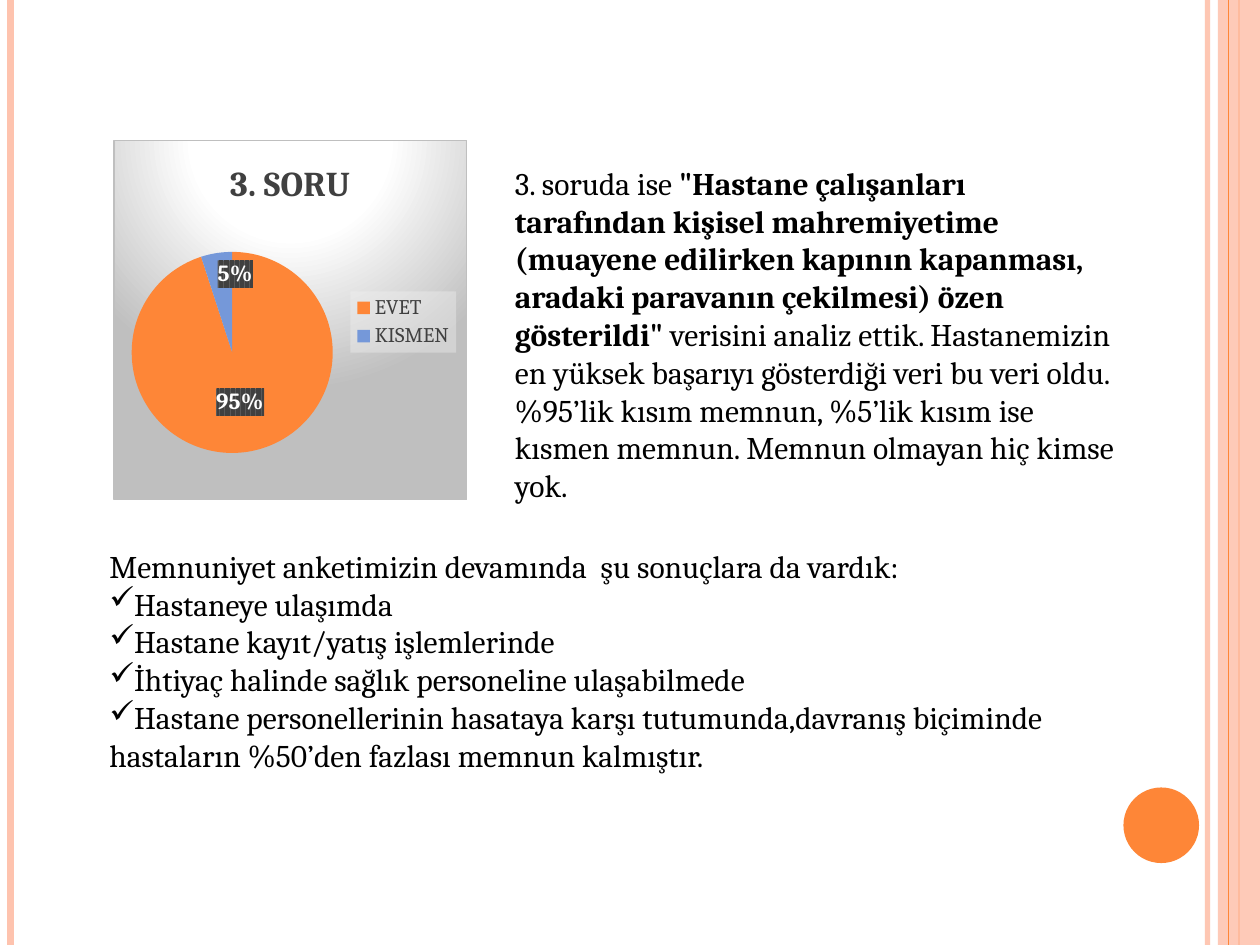
from dataclasses import dataclass

from lxml import etree
from pptx import Presentation
from pptx.chart.data import CategoryChartData
from pptx.dml.color import RGBColor
from pptx.enum.chart import XL_CHART_TYPE, XL_LABEL_POSITION, XL_LEGEND_POSITION
from pptx.enum.shapes import MSO_CONNECTOR, MSO_SHAPE
from pptx.oxml import parse_xml
from pptx.oxml.ns import nsdecls, qn
from pptx.util import Pt

PIE = XL_CHART_TYPE.PIE
RIGHT = XL_LEGEND_POSITION.RIGHT
CENTER = XL_LABEL_POSITION.CENTER
INSIDE_END = XL_LABEL_POSITION.INSIDE_END
STRAIGHT = MSO_CONNECTOR.STRAIGHT
RECTANGLE = MSO_SHAPE.RECTANGLE
OVAL = MSO_SHAPE.OVAL

WIDTH, HEIGHT = 720, 540
FONT = "Cambria"
ORANGE, PEACH, BLUE = "FE8637", "FEC3AE", "7598D9"
BLACK, WHITE, DARK, GRAY = "000000", "FFFFFF", "404040", "BFBFBF"


@dataclass
class Stripe:
    x: float
    weight: float
    color: str
    opacity: int = 100


@dataclass
class Box:
    left: float
    top: float
    width: float
    height: float

    def lengths(self) -> list:
        return [Pt(n) for n in (self.left, self.top, self.width, self.height)]


@dataclass
class Span:
    text: str
    bold: bool = False


@dataclass
class Line:
    spans: list[Span]
    checked: bool = False


@dataclass
class Slice:
    name: str
    value: int
    color: str
    label_position: XL_LABEL_POSITION


OUTER_STRIPES = [Stripe(690, 3, PEACH, 93), Stripe(6, 4.5, PEACH), Stripe(708, 1.5, ORANGE)]
INNER_STRIPE = Stripe(702, 0.75, ORANGE)
SLICES = [Slice("EVET", 95, ORANGE, CENTER), Slice("KISMEN", 5, BLUE, INSIDE_END)]
ANALYSIS = [Line([
    Span("3. soruda ise "),
    Span('"Hastane çalışanları tarafından kişisel mahremiyetime (muayene edilirken '
         'kapının kapanması, aradaki paravanın çekilmesi) özen gösterildi" ', True),
    Span("verisini analiz ettik. Hastanemizin en yüksek başarıyı gösterdiği veri bu veri "
         "oldu.%95’lik kısım memnun, %5’lik kısım ise kısmen memnun. "
         "Memnun olmayan hiç kimse yok."),
])]
RESULTS = [
    Line([Span("Memnuniyet anketimizin devamında  şu sonuçlara da vardık:")]),
    Line([Span("Hastaneye ulaşımda")], True),
    Line([Span("Hastane kayıt/yatış işlemlerinde")], True),
    Line([Span("İhtiyaç halinde sağlık personeline ulaşabilmede")], True),
    Line([Span("Hastane personellerinin hasataya karşı tutumunda,davranış biçiminde")], True),
    Line([Span("hastaların %50’den fazlası memnun kalmıştır.")]),
]


def rgb(color: str) -> RGBColor:
    return RGBColor.from_string(color)


def set_font(font, size: float, color: str, bold: bool = False) -> None:
    font.name, font.size, font.bold = FONT, Pt(size), bold
    font.color.rgb = rgb(color)


def set_opacity(element, percent: int) -> None:
    color = next(element.iter(qn("a:srgbClr")))
    etree.SubElement(color, qn("a:alpha"), val=str(percent * 1000))


def add_stripe(slide, stripe: Stripe) -> None:
    connector = slide.shapes.add_connector(
        STRAIGHT, Pt(stripe.x), Pt(0), Pt(stripe.x), Pt(HEIGHT))
    connector.line.width = Pt(stripe.weight)
    connector.line.color.rgb = rgb(stripe.color)
    properties = connector._element.spPr
    etree.SubElement(properties, qn("a:effectLst"))
    if stripe.opacity < 100:
        set_opacity(properties, stripe.opacity)


def add_filled_shape(slide, kind, box: Box, color: str, opacity: int = 100) -> None:
    shape = slide.shapes.add_shape(kind, *box.lengths())
    shape.shadow.inherit = False
    shape.fill.solid()
    shape.fill.fore_color.rgb = rgb(color)
    shape.line.fill.background()
    if opacity < 100:
        set_opacity(shape._element.spPr, opacity)


def add_text(slide, box: Box, lines: list[Line]) -> None:
    frame = slide.shapes.add_textbox(*box.lengths()).text_frame
    frame.word_wrap = True
    for index, line in enumerate(lines):
        paragraph = frame.add_paragraph() if index else frame.paragraphs[0]
        if line.checked:
            etree.SubElement(paragraph._p.get_or_add_pPr(), qn("a:buChar"), char="✓")
        for span in line.spans:
            run = paragraph.add_run()
            run.text = span.text
            set_font(run.font, 18, BLACK, span.bold)


def chart_format(content: str):
    return parse_xml(f'<c:spPr {nsdecls("c", "a")}>{content}</c:spPr>')


def solid(color: str, opacity: int = 100) -> str:
    return (f'<a:solidFill><a:srgbClr val="{color}"><a:alpha val="{opacity * 1000}"/>'
            '</a:srgbClr></a:solidFill>')


def manual_layout(x: float, y: float, width: float, height: float, inner: bool = False):
    """Build a chart layout from fractions of the chart's size."""
    target = '<c:layoutTarget val="inner"/>' if inner else ""
    return parse_xml(
        f'<c:layout {nsdecls("c")}><c:manualLayout>{target}'
        '<c:xMode val="edge"/><c:yMode val="edge"/>'
        f'<c:x val="{x}"/><c:y val="{y}"/><c:w val="{width}"/><c:h val="{height}"/>'
        '</c:manualLayout></c:layout>')


def format_slices(series) -> None:
    for index, item in enumerate(SLICES):
        point = series.points[index]
        point.format.fill.solid()
        point.format.fill.fore_color.rgb = rgb(item.color)
        set_font(point.data_label.font, 13.3, WHITE, True)
        point.data_label.position = item.label_position
    for label in series._element.iter(qn("c:dLbl")):
        label.find(qn("c:showVal")).set("val", "0")
        label.find(qn("c:showPercent")).set("val", "1")
        label.find(qn("c:txPr")).addprevious(chart_format(
            '<a:pattFill prst="dkVert">'
            f'<a:fgClr><a:srgbClr val="{DARK}"/></a:fgClr>'
            '<a:bgClr><a:srgbClr val="595959"/></a:bgClr></a:pattFill>'))


def add_pie(slide, box: Box) -> None:
    data = CategoryChartData()
    data.categories = [item.name for item in SLICES]
    data.add_series("Series 1", [item.value for item in SLICES])
    chart = slide.shapes.add_chart(PIE, *box.lengths(), data).chart
    set_font(chart.font, 10, BLACK)
    run = chart.chart_title.text_frame.paragraphs[0].add_run()
    run.text = "3. SORU"
    set_font(run.font, 20, DARK, True)
    format_slices(chart.plots[0].series[0])

    chart.has_legend = True
    legend = chart.legend
    legend.position = RIGHT
    legend.include_in_layout = False
    set_font(legend.font, 12, DARK)
    space = chart._chartSpace
    for part in ("c:plotArea", "c:legend"):
        for layout in space.find(".//" + qn(part)).findall(qn("c:layout")):
            layout.getparent().remove(layout)
    space.find(".//" + qn("c:plotArea")).insert(0, manual_layout(0.05, 0.31, 0.57, 0.56, True))
    space.find(".//" + qn("c:legendPos")).addnext(manual_layout(0.67, 0.42, 0.3, 0.17))
    space.find(".//" + qn("c:legend")).find(qn("c:txPr")).addprevious(
        chart_format(solid("F2F2F2", 39)))

    stops = "".join(f'<a:gs pos="{position * 1000}"><a:srgbClr val="{color}"/></a:gs>'
                    for position, color in ((0, WHITE), (39, WHITE), (100, GRAY)))
    space.find(qn("c:chart")).addnext(chart_format(
        f'<a:gradFill><a:gsLst>{stops}</a:gsLst><a:path path="circle">'
        '<a:fillToRect l="50000" t="-80000" r="50000" b="180000"/></a:path></a:gradFill>'
        f'<a:ln w="{Pt(0.75)}">{solid(GRAY)}</a:ln>'))


def main() -> None:
    presentation = Presentation()
    presentation.slide_width, presentation.slide_height = Pt(WIDTH), Pt(HEIGHT)
    slide = presentation.slides.add_slide(presentation.slide_layouts[6])
    for stripe in OUTER_STRIPES:
        add_stripe(slide, stripe)
    add_filled_shape(slide, RECTANGLE, Box(696, 0, 24, HEIGHT), PEACH, 87)
    add_stripe(slide, INNER_STRIPE)
    add_filled_shape(slide, OVAL, Box(642, 450, 43.2, 43.2), ORANGE)
    add_text(slide, Box(287.2, 90, 360, 181.4), ANALYSIS)
    add_text(slide, Box(55.4, 308.9, 605.5, 159.8), RESULTS)
    add_pie(slide, Box(64.8, 80, 202.3, 206))
    presentation.save("out.pptx")


if __name__ == "__main__":
    main()
